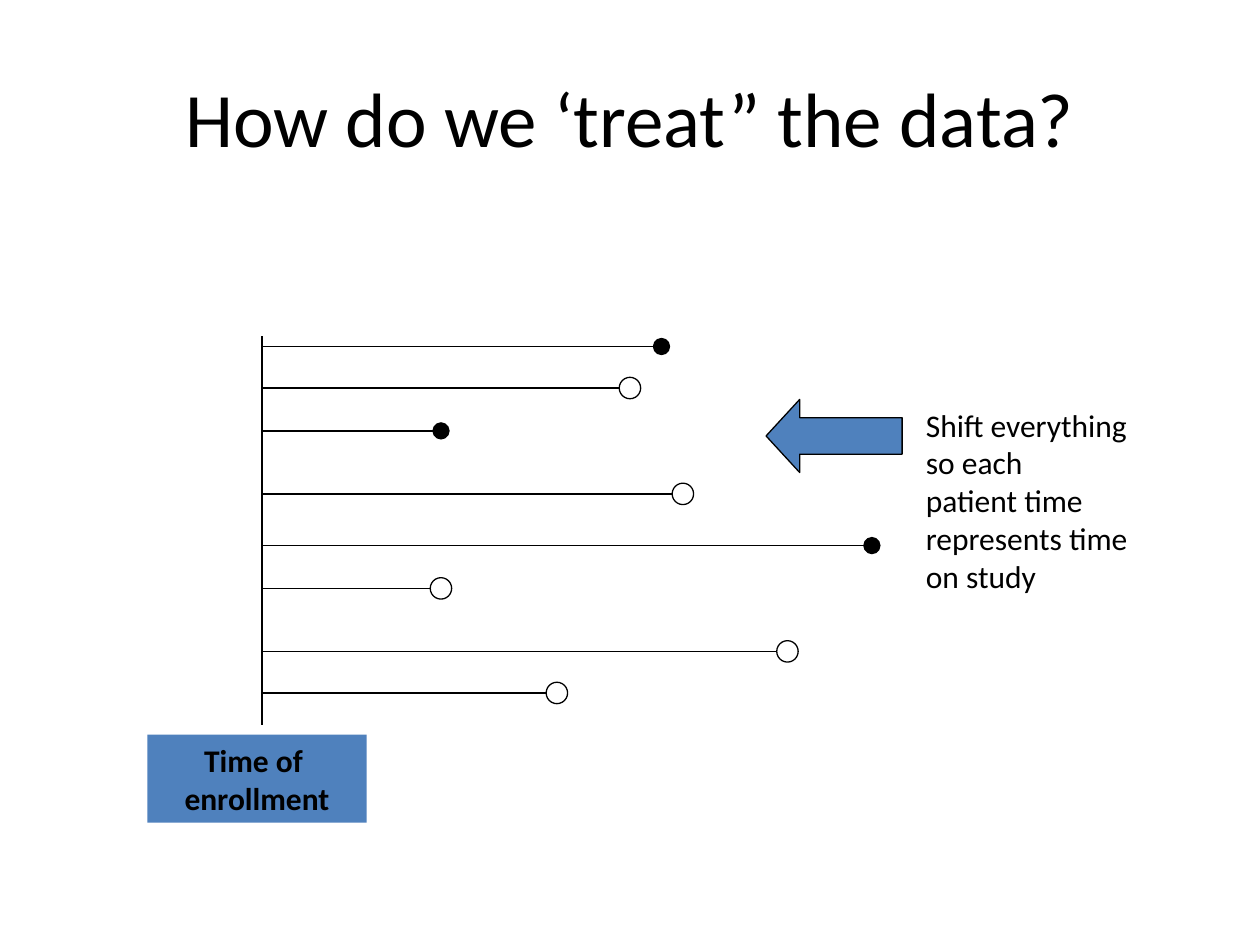
import pptx
import pptx.util
import pptx.dml.color
import pptx.enum.shapes
import pptx.enum.text
import pptx.oxml.ns
import lxml.etree

Inches = pptx.util.Inches
Pt = pptx.util.Pt
Shape = pptx.enum.shapes.MSO_SHAPE
Align = pptx.enum.text.PP_ALIGN
Anchor = pptx.enum.text.MSO_ANCHOR

BLACK = pptx.dml.color.RGBColor(0x00, 0x00, 0x00)
WHITE = pptx.dml.color.RGBColor(0xFF, 0xFF, 0xFF)
BLUE = pptx.dml.color.RGBColor(0x4F, 0x81, 0xBD)
THIN = Pt(0.75)
RING = 0.17

# Row height from the top of the axis, length of follow-up, event seen
PATIENTS = [
    (0.08, 3.17, True),
    (0.41, 2.92, False),
    (0.75, 1.42, True),
    (1.25, 3.34, False),
    (1.66, 4.84, True),
    (2.0, 1.42, False),
    (2.5, 4.17, False),
    (2.83, 2.34, False),
]


def write(frame, text, size=18, bold=False, align=Align.LEFT,
          anchor=Anchor.TOP, wrap=False):
    """Fill a text frame, one paragraph for each line of text."""
    frame.word_wrap = wrap
    frame.vertical_anchor = anchor
    frame.text = text
    for para in frame.paragraphs:
        para.alignment = align
        font = para.runs[0].font
        font.name = "Calibri"
        font.size = Pt(size)
        font.bold = bold
        font.color.rgb = BLACK


def place(shape, box):
    shape.left, shape.top, shape.width, shape.height = map(Inches, box)


def add_shape(slide, kind, box, fill, edge=True):
    shape = slide.shapes.add_shape(kind, *map(Inches, box))
    shape.shadow.inherit = False
    shape.fill.solid()
    shape.fill.fore_color.rgb = fill
    if edge:
        shape.line.color.rgb = BLACK
        shape.line.width = THIN
    else:
        shape.line.fill.background()
    return shape


def add_line(slide, x1, y1, x2, y2, dot=False):
    line = slide.shapes.add_connector(
        pptx.enum.shapes.MSO_CONNECTOR.STRAIGHT, *map(Inches, (x1, y1, x2, y2)))
    line.line.color.rgb = BLACK
    line.line.width = THIN
    qn = pptx.oxml.ns.qn
    if dot:
        lxml.etree.SubElement(line.line._get_or_add_ln(), qn("a:tailEnd"),
                              type="oval", w="lg", len="lg")
    lxml.etree.SubElement(line._element.spPr, qn("a:effectLst"))


def add_title(slide, box):
    title = slide.shapes.title
    place(title, box)
    write(title.text_frame, "How do we ‘treat” the data?", size=44,
          align=Align.CENTER, anchor=Anchor.MIDDLE, wrap=True)


def add_chart(slide, box):
    """Draw the enrollment axis and one line for each patient."""
    left, top, _, height = box
    add_line(slide, left, top, left, top + height)
    for row, span, event in PATIENTS:
        x, y = left + span, top + row
        add_line(slide, left, y, x, y, dot=event)
        # Open ring: censored patient
        if not event:
            ring = (x - RING / 2, y - RING / 2, RING, RING)
            add_shape(slide, Shape.OVAL, ring, WHITE)


def add_label(slide, box):
    label = add_shape(slide, Shape.RECTANGLE, box, BLUE, edge=False)
    write(label.text_frame, "Time of \nenrollment", bold=True,
          align=Align.CENTER)


def add_note(slide, box):
    """Place the arrow at the left of the box and the text beside it."""
    left, top, width, height = box
    arrow = add_shape(slide, Shape.LEFT_ARROW, (left, top, 1.08, 0.58), BLUE)
    arrow.adjustments[0] = 0.5
    arrow.adjustments[1] = 0.46
    gap = 1.17
    note = slide.shapes.add_textbox(
        *map(Inches, (left + gap, top, width - gap, height)))
    write(note.text_frame, "Shift everything\nso each\npatient time\n"
          "represents time\non study")


def main():
    deck = pptx.Presentation()
    deck.slide_width, deck.slide_height = Inches(10), Inches(7.5)
    slide = deck.slides.add_slide(deck.slide_layouts.get_by_name("Title Only"))
    add_title(slide, (0.5, 0.3, 9, 1.25))
    add_chart(slide, (2.08, 2.67, 4.84, 3.08))
    add_label(slide, (1.17, 5.83, 1.74, 0.7))
    add_note(slide, (6.08, 3.17, 3.39, 1.6))
    deck.save("out.pptx")


if __name__ == "__main__":
    main()
